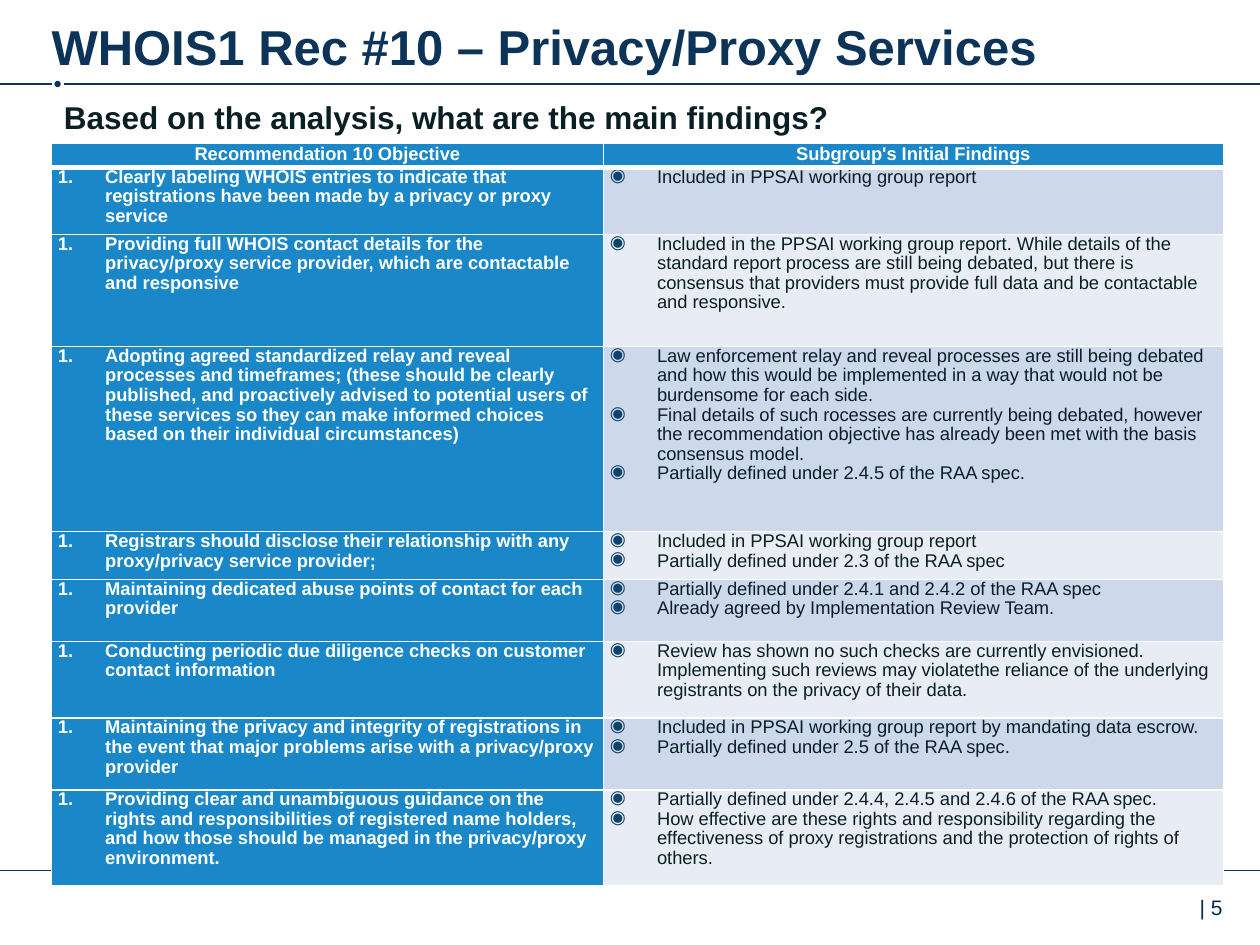
from dataclasses import dataclass

from lxml import etree
from pptx import Presentation
from pptx.dml.color import RGBColor
from pptx.enum.shapes import MSO_CONNECTOR, MSO_SHAPE
from pptx.enum.text import MSO_ANCHOR, MSO_AUTO_SIZE, PP_ALIGN
from pptx.oxml.ns import qn
from pptx.util import Pt

STRAIGHT = MSO_CONNECTOR.STRAIGHT
OVAL = MSO_SHAPE.OVAL
TOP = MSO_ANCHOR.TOP
NO_FIT = MSO_AUTO_SIZE.NONE
LEFT, CENTER = PP_ALIGN.LEFT, PP_ALIGN.CENTER


@dataclass(frozen=True)
class Theme:
    """Colours, font and type sizes of the slide."""
    navy: str = "0C3458"
    ink: str = "0A1F24"
    page_ink: str = "002B49"
    bullet: str = "0D436C"
    white: str = "FFFFFF"
    blue: str = "1A87C9"
    bands: tuple = ("CDD9EB", "E8EDF5")
    font: str = "Arial"
    title_size: float = 28
    heading_size: float = 18
    page_size: float = 12
    table_size: float = 10.5


THEME = Theme()
MARGIN = 29.5
TABLE_TOP = 82.1
COLUMN_WIDTHS = (315.4, 354.2)
ROW_HEIGHTS = (13.7, 38.2, 64.1, 105.8, 27.4, 35.3, 43.9, 41, 54.7)
INDENT = 27
HEADERS = ("Recommendation 10 Objective", "Subgroup's Initial Findings")
FINDINGS = (
    ("Clearly labeling WHOIS entries to indicate that registrations have been made by a privacy or proxy service",
     ["Included in PPSAI working group report"]),
    ("Providing full WHOIS contact details for the privacy/proxy service provider, which are contactable and responsive",
     ["Included in the PPSAI working group report. While details of the standard report process are still being "
      "debated, but there is consensus that providers must provide full data and be contactable and responsive."]),
    ("Adopting agreed standardized relay and reveal processes and timeframes; (these should be clearly published, "
     "and proactively advised to potential users of these services so they can make informed choices based on "
     "their individual circumstances)",
     ["Law enforcement relay and reveal processes are still being debated and how this would be implemented in a "
      "way that would not be burdensome for each side.",
      "Final details of such rocesses are currently being debated, however the recommendation objective has already "
      "been met with the basis consensus model.",
      "Partially defined under 2.4.5 of the RAA spec."]),
    ("Registrars should disclose their relationship with any proxy/privacy service provider;",
     ["Included in PPSAI working group report", "Partially defined under 2.3 of the RAA spec"]),
    ("Maintaining dedicated abuse points of contact for each provider",
     ["Partially defined under 2.4.1 and 2.4.2 of the RAA spec", "Already agreed by Implementation Review Team."]),
    ("Conducting periodic due diligence checks on customer contact information",
     ["Review has shown no such checks are currently envisioned. Implementing such reviews may violatethe reliance "
      "of the underlying registrants on the privacy of their data."]),
    ("Maintaining the privacy and integrity of registrations in the event that major problems arise with a "
     "privacy/proxy provider",
     ["Included in PPSAI working group report by mandating data escrow.",
      "Partially defined under 2.5 of the RAA spec."]),
    ("Providing clear and unambiguous guidance on the rights and responsibilities of registered name holders, and "
     "how those should be managed in the privacy/proxy environment.",
     ["Partially defined under 2.4.4, 2.4.5 and 2.4.6 of the RAA spec.",
      "How effective are these rights and responsibility regarding the effectiveness of proxy registrations and the "
      "protection of rights of others."]),
)


def style(paragraph, size, color, bold=False, align=LEFT):
    """Set the alignment and font of a paragraph."""
    paragraph.alignment = align
    font = paragraph.font
    font.name, font.size, font.bold = THEME.font, Pt(size), bold
    font.color.rgb = RGBColor.from_string(color)


def add_rule(slide, start, end, y):
    """Draw a thin horizontal rule."""
    rule = slide.shapes.add_connector(STRAIGHT, Pt(start), Pt(y), Pt(end), Pt(y))
    rule.line.color.rgb = RGBColor.from_string(THEME.navy)
    rule.line.width = Pt(1)
    etree.SubElement(rule._element.spPr, qn("a:effectLst"))


def add_dot(slide, left, top, size):
    """Draw the round mark that interrupts a rule."""
    dot = slide.shapes.add_shape(OVAL, Pt(left), Pt(top), Pt(size), Pt(size))
    dot.shadow.inherit = False
    dot.fill.solid()
    dot.fill.fore_color.rgb = RGBColor.from_string(THEME.navy)
    dot.line.fill.background()


def set_title(slide, text):
    """Fill and place the title placeholder."""
    title = slide.shapes.title
    title.left, title.top, title.width, title.height = Pt(MARGIN), Pt(3.6), Pt(630.7), Pt(35.3)
    frame = title.text_frame
    frame.text = text
    frame.auto_size, frame.vertical_anchor = NO_FIT, TOP
    frame.margin_left = frame.margin_right = 0
    frame.margin_top = Pt(6)
    style(frame.paragraphs[0], THEME.title_size, THEME.navy, True)


def add_text(slide, box, text, size, color, bold=False):
    """Add one line of text in a box of left, top, width and height."""
    frame = slide.shapes.add_textbox(*map(Pt, box)).text_frame
    frame.word_wrap = True
    frame.text = text
    style(frame.paragraphs[0], size, color, bold)


def add_bullet(paragraph, kind, color=None, **attributes):
    """Give a paragraph a hanging bullet or number."""
    properties = paragraph._p.get_or_add_pPr()
    properties.set("marL", str(Pt(INDENT)))
    properties.set("indent", str(-Pt(INDENT)))
    if color:
        bullet_color = etree.SubElement(properties, qn("a:buClr"))
        etree.SubElement(bullet_color, qn("a:srgbClr"), val=color)
    etree.SubElement(properties, qn(kind), **attributes)


def set_borders(cell, top, bottom):
    """Draw white borders around a cell."""
    properties = cell._tc.get_or_add_tcPr()
    for side, width in (("L", 1), ("R", 1), ("T", top), ("B", bottom)):
        border = etree.SubElement(properties, qn(f"a:ln{side}"), w=str(Pt(width)))
        fill = etree.SubElement(border, qn("a:solidFill"))
        etree.SubElement(fill, qn("a:srgbClr"), val=THEME.white)


def fill_cell(cell, lines, fill, color, bold, align=LEFT, bullet=None):
    """Write and format the paragraphs of a table cell."""
    cell.margin_left = cell.margin_right = Pt(3.6)
    cell.margin_top = cell.margin_bottom = 0
    cell.fill.solid()
    cell.fill.fore_color.rgb = RGBColor.from_string(fill)
    cell.text = "\n".join(lines)
    for paragraph in cell.text_frame.paragraphs:
        if bullet:
            add_bullet(paragraph, **bullet)
            paragraph.line_spacing = 0.96
        style(paragraph, THEME.table_size, color, bold, align)


def add_findings_table(slide):
    """Add the table of objectives and findings."""
    table = slide.shapes.add_table(
        len(ROW_HEIGHTS), len(COLUMN_WIDTHS), Pt(MARGIN), Pt(TABLE_TOP),
        Pt(sum(COLUMN_WIDTHS)), Pt(sum(ROW_HEIGHTS))).table
    for column, width in zip(table.columns, COLUMN_WIDTHS):
        column.width = Pt(width)
    for index, (row, height) in enumerate(zip(table.rows, ROW_HEIGHTS)):
        row.height = Pt(height)
        for cell in row.cells:
            set_borders(cell, 3 if index == 1 else 1, 3 if index == 0 else 1)
    for column, header in enumerate(HEADERS):
        fill_cell(table.cell(0, column), [header], THEME.blue, THEME.white, True, CENTER)
    number = {"kind": "a:buAutoNum", "type": "arabicPeriod"}
    disc = {"kind": "a:buChar", "color": THEME.bullet, "char": "◉"}
    for index, (objective, findings) in enumerate(FINDINGS):
        fill_cell(table.cell(index + 1, 0), [objective], THEME.blue, THEME.white, True, bullet=number)
        fill_cell(table.cell(index + 1, 1), findings, THEME.bands[index % 2], THEME.ink, False, bullet=disc)


def main():
    """Build and save the slide."""
    deck = Presentation()
    deck.slide_width, deck.slide_height = Pt(720), Pt(540)
    slide = deck.slides.add_slide(deck.slide_layouts[5])
    for start, end, y in ((0, MARGIN, 48), (36.7, 720, 48), (0, MARGIN, 497.5), (690.5, 720, 497.5)):
        add_rule(slide, start, end, y)
    add_dot(slide, 31.1, 46.2, 3.6)
    set_title(slide, "WHOIS1 Rec #10 – Privacy/Proxy Services")
    add_text(slide, (MARGIN, 52.6, 669.6, 28.8), "Based on the analysis, what are the main findings?",
             THEME.heading_size, THEME.ink, True)
    add_findings_table(slide)
    add_text(slide, (678.5, 507.6, 41.5, 28.8), "| 5", THEME.page_size, THEME.page_ink)
    deck.save("out.pptx")


if __name__ == "__main__":
    main()
